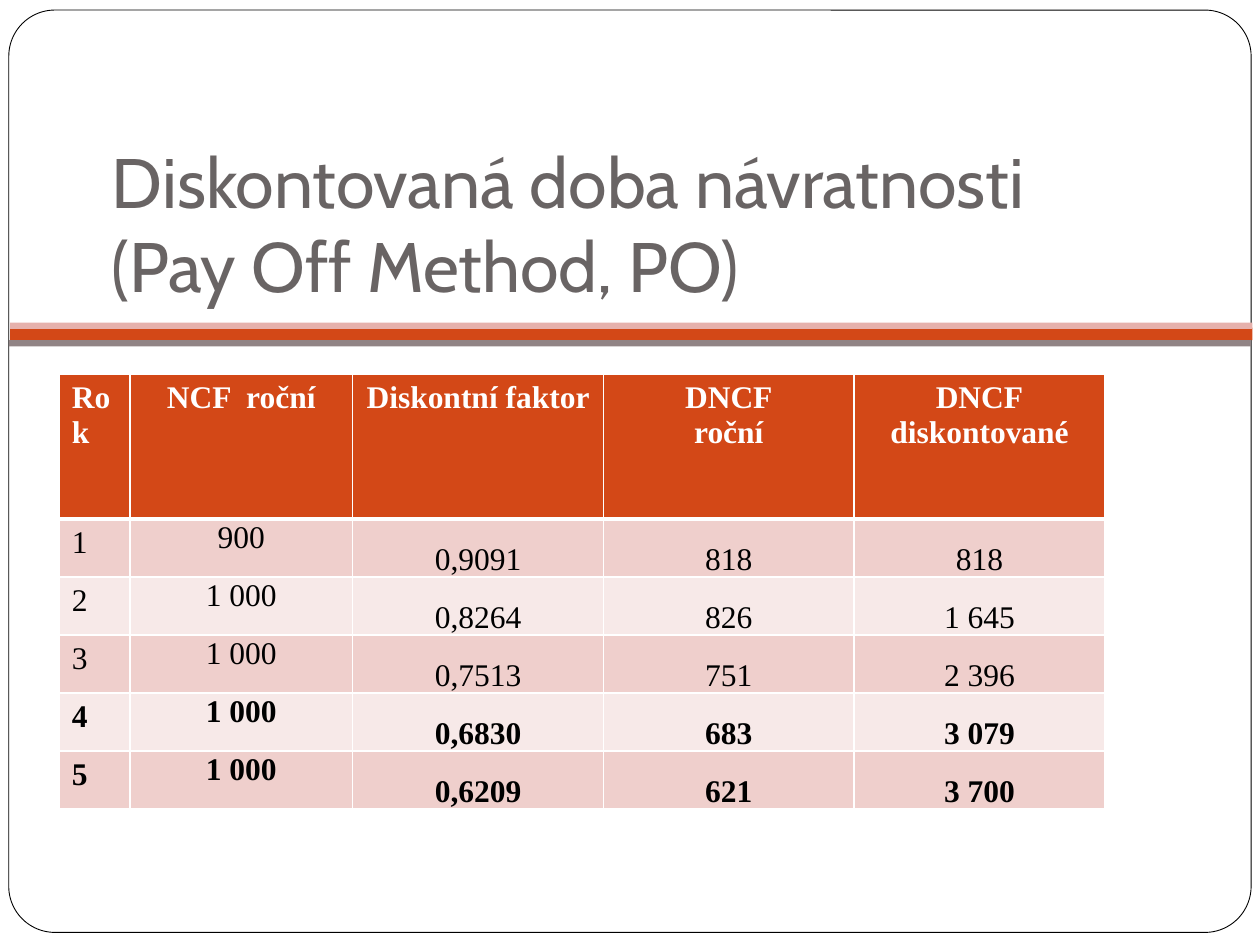
from dataclasses import dataclass

from lxml.etree import SubElement
from pptx import Presentation
from pptx.dml.color import RGBColor
from pptx.enum.shapes import MSO_SHAPE
from pptx.enum.text import MSO_ANCHOR, PP_ALIGN
from pptx.oxml.ns import qn
from pptx.util import Inches, Pt


@dataclass(frozen=True)
class Theme:
    accent: str = "D34817"
    accent_light: str = "E6B1AC"
    grey: str = "918485"
    title: str = "696464"
    text: str = "000000"
    white: str = "FFFFFF"
    row_bands: tuple = ("EFCFCC", "F7E9E8")
    title_font: str = "Cabin"
    table_font: str = "Times New Roman"
    title_size: int = 40
    table_size: int = 18


@dataclass(frozen=True)
class Panel:
    left: float
    top: float
    width: float
    height: float
    fill: str
    kind: MSO_SHAPE = MSO_SHAPE.RECTANGLE
    outline: str | None = None
    rounding: float | None = None


THEME = Theme()
PANELS = (
    Panel(0.07, 0.08, 9.86, 7.32, THEME.white, MSO_SHAPE.ROUNDED_RECTANGLE, THEME.text, 0.05),
    Panel(0.08, 2.6, 9.86, 0.1, THEME.accent),
    Panel(0.08, 2.56, 9.86, 0.05, THEME.accent_light),
    Panel(0.07, 2.7, 9.86, 0.05, THEME.grey),
)
TITLE = "Diskontovaná doba návratnosti \v(Pay Off Method, PO)"
COLUMN_WIDTHS = (0.56, 1.77, 1.99, 1.99, 1.99)
ROW_HEIGHTS = (1.15,) + (0.46,) * 5
CASH_FLOWS = (
    ("Rok", "NCF  roční", "Diskontní faktor", "DNCF\nroční", "DNCF\ndiskontované"),
    ("1", "900", "0,9091", "818", "818"),
    ("2", "1 000", "0,8264", "826", "1 645"),
    ("3", "1 000", "0,7513", "751", "2 396"),
    ("4", "1 000", "0,6830", "683", "3 079"),
    ("5", "1 000", "0,6209", "621", "3 700"),
)
FIRST_BOLD_YEAR = 4


def rgb(value: str) -> RGBColor:
    """Turn a hex string into a colour."""
    return RGBColor.from_string(value)


def style_font(font, name: str, size: int, color: str, bold: bool = False) -> None:
    """Set the face, size, colour and weight of a font."""
    font.name, font.size, font.bold = name, Pt(size), bold
    font.color.rgb = rgb(color)


def draw_panel(slide, panel: Panel) -> None:
    """Draw one filled panel of the slide frame."""
    frame = slide.shapes.add_shape(
        panel.kind, *map(Inches, (panel.left, panel.top, panel.width, panel.height))
    )
    frame.shadow.inherit = False
    frame.fill.solid()
    frame.fill.fore_color.rgb = rgb(panel.fill)
    if panel.rounding is not None:
        frame.adjustments[0] = panel.rounding
    if panel.outline:
        frame.line.color.rgb = rgb(panel.outline)
        frame.line.width = Pt(0.5)
    else:
        frame.line.fill.background()


def draw_title(slide) -> None:
    """Write the slide title, resting on the coloured bands."""
    heading = slide.shapes.add_textbox(*map(Inches, (0.79, 1.04, 8.5, 1.49))).text_frame
    heading.word_wrap = True
    heading.vertical_anchor = MSO_ANCHOR.BOTTOM
    heading.margin_bottom = Inches(0.1)
    heading.text = TITLE
    style_font(heading.paragraphs[0].font, THEME.title_font, THEME.title_size, THEME.title)


def add_border(cell, side: str, points: float) -> None:
    """Add a white border to one side of a cell."""
    border = SubElement(cell._tc.get_or_add_tcPr(), qn(f"a:ln{side}"), w=str(Pt(points)))
    SubElement(SubElement(border, qn("a:solidFill")), qn("a:srgbClr"), val=THEME.white)


def fill_cell(cell, text: str, row: int, column: int) -> None:
    """Write and style one table cell by its place in the grid."""
    header = row == 0
    for side, points in (("L", 1), ("R", 1), ("T", 3 if row == 1 else 1), ("B", 3 if header else 1)):
        add_border(cell, side, points)
    cell.fill.solid()
    cell.fill.fore_color.rgb = rgb(THEME.accent if header else THEME.row_bands[(row - 1) % 2])
    if not header and column > 0:
        cell.margin_left = cell.margin_right = cell.margin_top = Inches(0.01)
        cell.margin_bottom = 0
        cell.vertical_anchor = MSO_ANCHOR.BOTTOM if column > 1 else MSO_ANCHOR.TOP
    cell.text = text
    for paragraph in cell.text_frame.paragraphs:
        paragraph.alignment = PP_ALIGN.CENTER if column else PP_ALIGN.LEFT
        style_font(
            paragraph.font,
            THEME.table_font,
            THEME.table_size,
            THEME.white if header else THEME.text,
            header or row >= FIRST_BOLD_YEAR,
        )


def draw_cash_flows(slide) -> None:
    """Draw the table of discounted cash flows."""
    cash_flows = slide.shapes.add_table(
        len(ROW_HEIGHTS),
        len(COLUMN_WIDTHS),
        *map(Inches, (0.47, 2.97, sum(COLUMN_WIDTHS), sum(ROW_HEIGHTS))),
    ).table
    for column, width in zip(cash_flows.columns, COLUMN_WIDTHS):
        column.width = Inches(width)
    for row, height in zip(cash_flows.rows, ROW_HEIGHTS):
        row.height = Inches(height)
    for row, values in enumerate(CASH_FLOWS):
        for column, text in enumerate(values):
            fill_cell(cash_flows.cell(row, column), text, row, column)


def main() -> None:
    """Build the slide and save it."""
    presentation = Presentation()
    presentation.slide_width, presentation.slide_height = Inches(10), Inches(7.5)
    slide = presentation.slides.add_slide(presentation.slide_layouts[6])
    for panel in PANELS:
        draw_panel(slide, panel)
    draw_title(slide)
    draw_cash_flows(slide)
    presentation.save("out.pptx")


if __name__ == "__main__":
    main()
